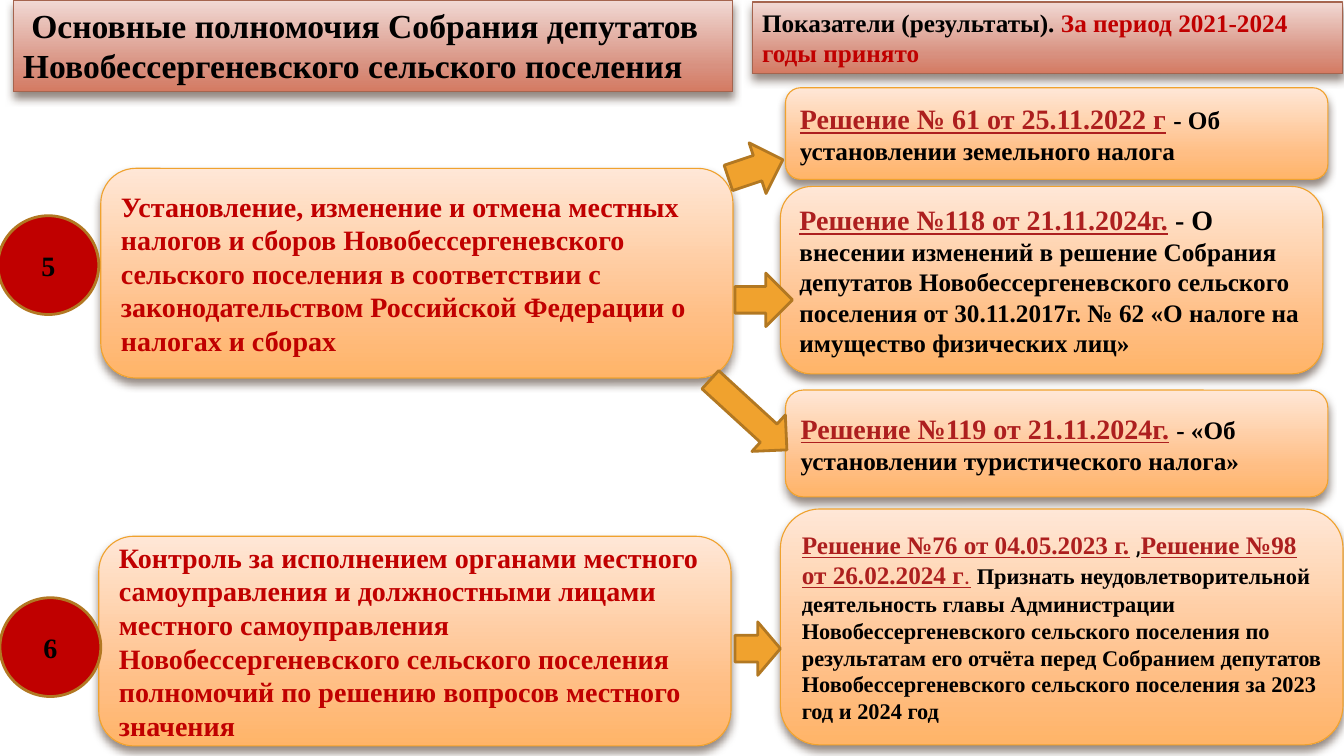
import dataclasses

import pptx
import pptx.dml.color
import pptx.enum.dml
import pptx.enum.shapes
import pptx.enum.text
import pptx.oxml.ns
import pptx.util
from lxml import etree
from pptx.util import Inches

SHAPES = pptx.enum.shapes.MSO_SHAPE
ALIGN = pptx.enum.text.PP_ALIGN
ANCHOR = pptx.enum.text.MSO_ANCHOR


@dataclasses.dataclass(frozen=True)
class Theme:
    font: str = "Times New Roman"
    symbol_font: str = "Roboto"
    black: str = "000000"
    red: str = "C00000"
    link: str = "AD1F1F"
    arrow: str = "F0A22E"
    outline: str = "B27822"
    header_line: str = "A5644E"
    shadow: str = "4E3B30"
    orange_stops: tuple = ((0, "FFE7D7"), (72, "FFBE84"), (100, "FFB468"))
    brick_stops: tuple = ((0, "F1D9D4"), (72, "D89180"), (100, "D47A62"))
    title: int = 24
    large: int = 20
    medium: int = 18
    small: int = 16
    thin: float = 0.79
    thick: float = 2


THEME = Theme()


def rgb(color):
    return pptx.dml.color.RGBColor.from_string(color)


def add_xml(parent, tag, **attributes):
    return etree.SubElement(parent, pptx.oxml.ns.qn(tag), attributes)


def add_span(para, text, size=THEME.large, color=THEME.black, bold=True,
             underline=False, font=THEME.font):
    span = para.add_run()
    span.text = text
    span.font.name = font
    span.font.size = pptx.util.Pt(size)
    span.font.bold = bold
    span.font.underline = underline
    span.font.color.rgb = rgb(color)


class SlideBuilder:
    def __init__(self, page, theme):
        self.page = page
        self.theme = theme

    def shape(self, kind, left, top, width, height, line, weight):
        box = self.page.shapes.add_shape(
            kind, Inches(left), Inches(top), Inches(width), Inches(height))
        box.shadow.inherit = False
        box.line.color.rgb = rgb(line)
        box.line.width = pptx.util.Pt(weight)
        return box

    def fill_text(self, box, spans, anchor=ANCHOR.MIDDLE, align=ALIGN.LEFT):
        frame = box.text_frame
        frame.word_wrap = True
        frame.vertical_anchor = anchor
        para = frame.paragraphs[0]
        para.alignment = align
        for text, style in spans:
            add_span(para, text, **style)

    def gradient(self, box, stops):
        box.fill.gradient()
        box.fill.gradient_angle = 270
        stop_list = box.element.spPr.find(".//" + pptx.oxml.ns.qn("a:gsLst"))
        for stop in list(stop_list):
            stop_list.remove(stop)
        for position, color in stops:
            stop = add_xml(stop_list, "a:gs", pos=str(position * 1000))
            add_xml(stop, "a:srgbClr", val=color)

    def cast_shadow(self, box):
        effects = box.element.spPr.find(pptx.oxml.ns.qn("a:effectLst"))
        shadow = add_xml(effects, "a:outerShdw", blurRad=str(pptx.util.Pt(6)),
                         dist=str(pptx.util.Pt(4)), dir="5400000", rotWithShape="0")
        color = add_xml(shadow, "a:srgbClr", val=self.theme.shadow)
        add_xml(color, "a:alpha", val="60000")

    def header(self, left, top, width, height, spans):
        box = self.shape(SHAPES.RECTANGLE, left, top, width, height,
                         self.theme.header_line, self.theme.thin)
        self.gradient(box, self.theme.brick_stops)
        self.cast_shadow(box)
        self.fill_text(box, spans, anchor=ANCHOR.TOP)
        box.text_frame.auto_size = pptx.enum.text.MSO_AUTO_SIZE.SHAPE_TO_FIT_TEXT

    def card(self, left, top, width, height, spans):
        box = self.shape(SHAPES.ROUNDED_RECTANGLE, left, top, width, height,
                         self.theme.arrow, self.theme.thin)
        self.gradient(box, self.theme.orange_stops)
        self.cast_shadow(box)
        self.fill_text(box, spans)

    def solid(self, kind, left, top, width, height, color):
        box = self.shape(kind, left, top, width, height,
                         self.theme.outline, self.theme.thick)
        box.fill.solid()
        box.fill.fore_color.rgb = rgb(color)
        return box

    def badge(self, left, top, number):
        box = self.solid(SHAPES.OVAL, left, top, 1, 0.98, self.theme.red)
        self.fill_text(box, [(number, {})], align=ALIGN.CENTER)

    def arrow(self, left, top, width, height, rotation=0):
        box = self.solid(SHAPES.RIGHT_ARROW, left, top, width, height, self.theme.arrow)
        box.rotation = rotation


POWER = {"color": THEME.red}
LINK = {"color": THEME.link, "underline": True}
MEDIUM_LINK = {**LINK, "size": THEME.medium}
MEDIUM = {"size": THEME.medium}
SYMBOL = {"size": THEME.medium, "font": THEME.symbol_font, "bold": False}

POWERS = [
    (1, 1.67, "Установление, изменение и отмена местных налогов и сборов "
     "Новобессергеневского сельского поселения в соответствии с "
     "законодательством Российской Федерации о налогах и сборах"),
    (0.98, 5.32, "Контроль за исполнением органами местного самоуправления и "
     "должностными лицами местного самоуправления Новобессергеневского "
     "сельского поселения полномочий по решению вопросов местного значения"),
]
BADGES = [(-0.02, 2.14, "5"), (0, 5.93, "6")]
DECISIONS = [
    (7.79, 0.87, 5.38, 0.91, [
        ("Решение № 61 от 25.11.2022 г", LINK), (" ", {}),
        ("- Об установлении земельного налога", MEDIUM)]),
    (7.74, 1.85, 5.38, 1.86, [
        ("Решение №118 от 21.11.2024г.", LINK), (" - О ", {}),
        ("внесении изменений в решение Собрания депутатов Новобессергеневского "
         "сельского поселения от 30.11.2017г. № 62 «О налоге на имущество "
         "физических лиц»", MEDIUM)]),
    (7.79, 3.87, 5.38, 1.06, [
        ("Решение №119 от 21.11.2024г.", LINK), (" ", {}),
        ("- «Об установлении туристического налога»", MEDIUM)]),
    (7.74, 5.05, 5.58, 2.34, [
        ("Решение №76 от 04.05.2023 г.", MEDIUM_LINK), (" ", MEDIUM),
        (",", SYMBOL), ("Решение №98 от 26.02.2024 г", MEDIUM_LINK),
        (".", {**MEDIUM_LINK, **SYMBOL}), (" ", SYMBOL),
        ("Признать неудовлетворительной деятельность главы Администрации "
         "Новобессергеневского сельского поселения по результатам его отчёта "
         "перед Собранием депутатов Новобессергеневского сельского поселения "
         "за 2023 год и 2024 год", {"size": THEME.small})]),
]
ARROWS = [
    (7.21, 1.41, 0.57, 0.53, 341.5),
    (7.29, 2.71, 0.57, 0.53),
    (6.91, 3.87, 1.03, 0.49, 42.5),
    (7.29, 6.17, 0.45, 0.53),
]


def main():
    deck = pptx.Presentation()
    deck.slide_width = Inches(13.33)
    deck.slide_height = Inches(7.5)
    builder = SlideBuilder(deck.slides.add_slide(deck.slide_layouts[6]), THEME)

    builder.header(0.13, 0, 7.14, 0.91, [
        (" Основные полномочия Собрания депутатов Новобессергеневского "
         "сельского поселения", {"size": THEME.title})])
    builder.header(7.46, 0.02, 5.86, 0.71, [
        ("Показатели (результаты). ", MEDIUM),
        ("За период 2021-2024 годы принято", {**MEDIUM, **POWER})])
    for left, top, text in POWERS:
        builder.card(left, top, 6.27, 2.08, [(text, POWER)])
    for badge in BADGES:
        builder.badge(*badge)
    for decision in DECISIONS:
        builder.card(*decision)
    for arrow in ARROWS:
        builder.arrow(*arrow)

    deck.save("out.pptx")


if __name__ == "__main__":
    main()
